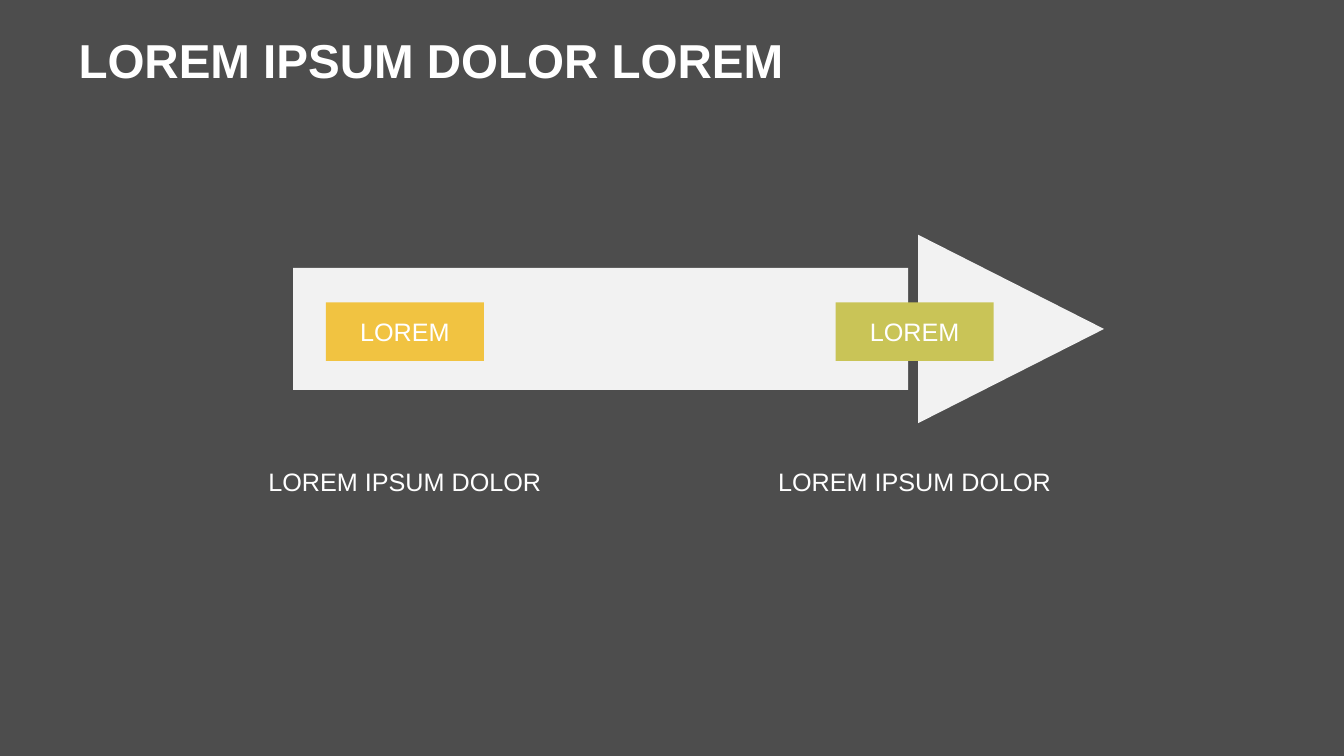
from dataclasses import dataclass

from pptx import Presentation
from pptx.dml.color import RGBColor
from pptx.enum.shapes import MSO_SHAPE
from pptx.enum.text import MSO_ANCHOR, PP_ALIGN
from pptx.shapes.autoshape import Shape
from pptx.slide import Slide
from pptx.util import Pt

RECTANGLE = MSO_SHAPE.RECTANGLE
TOP, MIDDLE = MSO_ANCHOR.TOP, MSO_ANCHOR.MIDDLE
LEFT, CENTER = PP_ALIGN.LEFT, PP_ALIGN.CENTER

COLORS = {
    "background": "4D4D4D",
    "arrow": "F2F2F2",
    "yellow": "F1C341",
    "green": "C9C457",
    "text": "FFFFFF",
}
FONT = "Arial"

SHAFT = [(209.4, 191.4), (648.6, 191.4), (648.6, 278.6), (209.4, 278.6)]
HEAD = [(655.8, 167.7), (788.6, 235), (655.8, 302.3)]

TAG_TOP, TAG_WIDTH, TAG_HEIGHT = 216, 112.8, 41.9
CAPTION_TOP, CAPTION_WIDTH, CAPTION_HEIGHT = 322.6, 235.4, 133.9


@dataclass
class Stage:
    center: float
    color: str
    label: str
    caption: str


STAGES = [
    Stage(289.2, "yellow", "LOREM", "LOREM IPSUM DOLOR"),
    Stage(653.3, "green", "LOREM", "LOREM IPSUM DOLOR"),
]


def color(name: str) -> RGBColor:
    return RGBColor.from_string(COLORS[name])


def paint(shape: Shape, name: str) -> None:
    shape.shadow.inherit = False
    shape.fill.solid()
    shape.fill.fore_color.rgb = color(name)
    shape.line.fill.background()


def write(box: Shape, text: str, size: float, align: PP_ALIGN, anchor: MSO_ANCHOR,
          spacing: float = 1.0, bold: bool = False) -> None:
    frame = box.text_frame
    frame.text = text
    frame.word_wrap = True
    frame.vertical_anchor = anchor
    para = frame.paragraphs[0]
    para.alignment = align
    para.line_spacing = spacing
    font = para.runs[0].font
    font.name = FONT
    font.size = Pt(size)
    font.bold = bold
    font.color.rgb = color("text")


def add_text_box(page: Slide, left: float, top: float, width: float, height: float) -> Shape:
    return page.shapes.add_textbox(Pt(left), Pt(top), Pt(width), Pt(height))


def add_arrow(page: Slide) -> None:
    shaft, head = ([(Pt(x), Pt(y)) for x, y in outline] for outline in (SHAFT, HEAD))
    builder = page.shapes.build_freeform(*shaft[0])
    builder.add_line_segments(shaft[1:], close=True)
    builder.move_to(*head[0])
    builder.add_line_segments(head[1:], close=True)
    paint(builder.convert_to_shape(), "arrow")


def add_stage(page: Slide, stage: Stage) -> None:
    tag = page.shapes.add_shape(RECTANGLE, Pt(stage.center - TAG_WIDTH / 2), Pt(TAG_TOP),
                                Pt(TAG_WIDTH), Pt(TAG_HEIGHT))
    paint(tag, stage.color)
    write(tag, stage.label, 18, CENTER, MIDDLE)

    caption = add_text_box(page, stage.center - CAPTION_WIDTH / 2, CAPTION_TOP,
                           CAPTION_WIDTH, CAPTION_HEIGHT)
    frame = caption.text_frame
    frame.margin_left = frame.margin_right = frame.margin_top = frame.margin_bottom = 0
    write(caption, stage.caption, 18, CENTER, TOP, spacing=1.5)


def main() -> None:
    deck = Presentation()
    deck.slide_width, deck.slide_height = Pt(960), Pt(540)
    page = deck.slides.add_slide(deck.slide_layouts[6])
    page.background.fill.solid()
    page.background.fill.fore_color.rgb = color("background")

    add_arrow(page)
    for stage in STAGES:
        add_stage(page, stage)

    title = add_text_box(page, 49, 13.7, 862.6, 62.6)
    write(title, "LOREM IPSUM DOLOR LOREM", 34, LEFT, MIDDLE, spacing=0.9, bold=True)

    deck.save("out.pptx")


if __name__ == "__main__":
    main()
